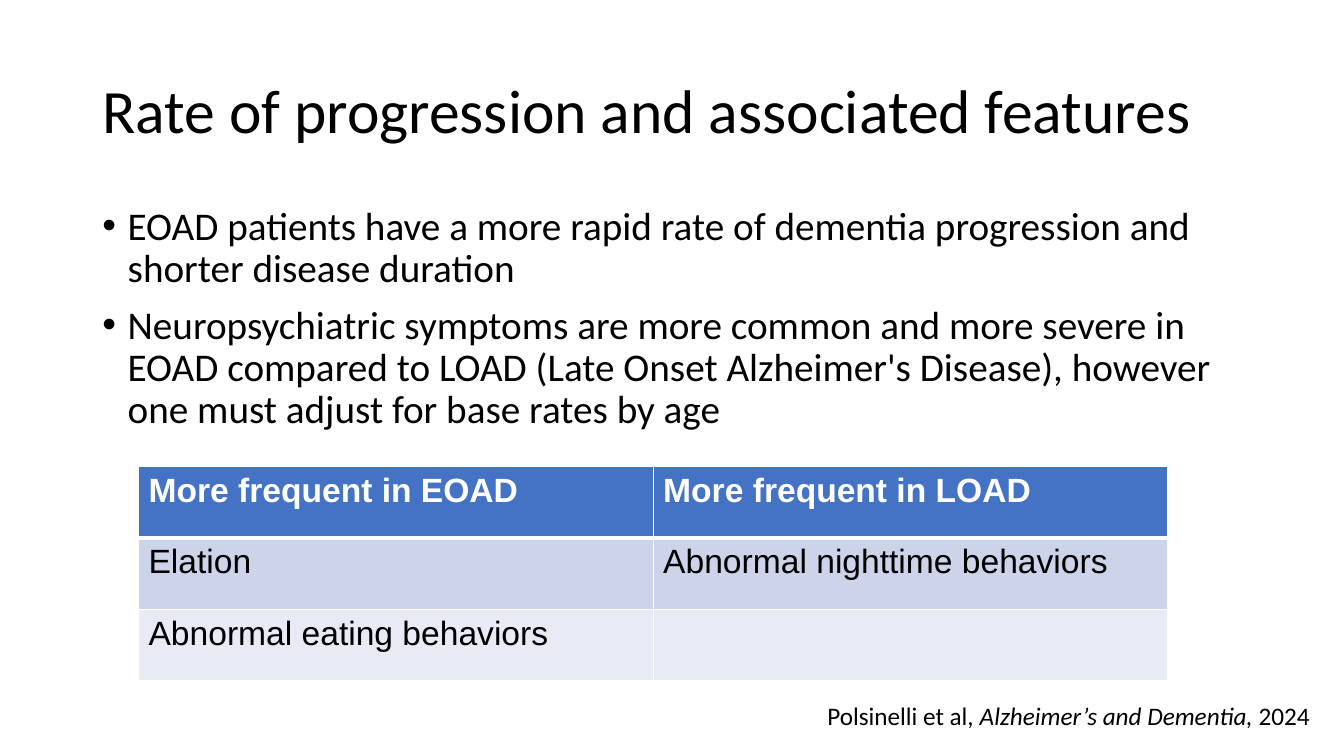
from dataclasses import dataclass

from lxml import etree
from pptx import Presentation
from pptx.dml.color import RGBColor
from pptx.enum.text import MSO_ANCHOR
from pptx.oxml.ns import qn
from pptx.util import Cm, Pt

TOP = MSO_ANCHOR.TOP
MIDDLE = MSO_ANCHOR.MIDDLE

BLACK = RGBColor(0x00, 0x00, 0x00)
WHITE = RGBColor(0xFF, 0xFF, 0xFF)
HEADER_BLUE = RGBColor(0x44, 0x72, 0xC4)
BAND_DARK = RGBColor(0xCD, 0xD4, 0xEA)
BAND_LIGHT = RGBColor(0xE8, 0xEB, 0xF5)

TEXT_FONT = "Calibri"
TABLE_FONT = "Arial"
INDENT = Cm(0.64)
COLUMN_WIDTH = Cm(12.97)
ROW_HEIGHT = Cm(1.8)


@dataclass(frozen=True)
class Span:
    text: str
    italic: bool = False


@dataclass(frozen=True)
class TextBlock:
    left: float
    top: float
    width: float
    height: float
    size: int
    paragraphs: tuple[tuple[Span, ...], ...]
    anchor: MSO_ANCHOR = TOP
    line_spacing: float = 0.9
    bulleted: bool = False
    wrap: bool = True


@dataclass(frozen=True)
class TableRow:
    texts: tuple[str, str]
    fill: RGBColor
    color: RGBColor = BLACK
    bold: bool = False
    top_line: int = 1
    bottom_line: int = 1


TEXT_BLOCKS = (
    TextBlock(2.33, 1.01, 29.21, 3.68, 44,
              ((Span("Rate of progression and associated features"),),),
              anchor=MIDDLE),
    TextBlock(2.33, 5.08, 29.21, 12.09, 28, (
        (Span("EOAD patients have a more rapid rate of dementia progression "
              "and shorter disease duration"),),
        (Span("Neuropsychiatric symptoms are more common and more severe in "
              "EOAD compared to LOAD (Late Onset Alzheimer's Disease), "
              "however one must adjust for base rates by age"),),
    ), bulleted=True),
    TextBlock(20.6, 17.53, 12.85, 1.02, 18, (
        (Span("Polsinelli et al, "),
         Span("Alzheimer’s and Dementia, ", italic=True),
         Span("2024")),
    ), line_spacing=1.0, wrap=False),
)

TABLE_ROWS = (
    TableRow(("More frequent in EOAD", "More frequent in LOAD"),
             HEADER_BLUE, WHITE, bold=True, bottom_line=3),
    TableRow(("Elation", "Abnormal nighttime behaviors"), BAND_DARK, top_line=3),
    TableRow(("Abnormal eating behaviors", ""), BAND_LIGHT),
)


def set_font(font, name: str, size: int, color: RGBColor, bold: bool = False) -> None:
    font.name = name
    font.size = Pt(size)
    font.color.rgb = color
    font.bold = bold


def add_bullet(paragraph) -> None:
    properties = paragraph._p.get_or_add_pPr()
    properties.set("marL", str(INDENT))
    properties.set("indent", str(-INDENT))
    etree.SubElement(properties, qn("a:buFont"), typeface="Arial")
    etree.SubElement(properties, qn("a:buChar"), char="•")


def draw_text(page, block: TextBlock) -> None:
    box = page.shapes.add_textbox(Cm(block.left), Cm(block.top),
                                  Cm(block.width), Cm(block.height))
    frame = box.text_frame
    frame.word_wrap = block.wrap
    frame.vertical_anchor = block.anchor
    for index, spans in enumerate(block.paragraphs):
        paragraph = frame.add_paragraph() if index else frame.paragraphs[0]
        if block.bulleted:
            add_bullet(paragraph)
        paragraph.line_spacing = block.line_spacing
        if index:
            paragraph.space_before = Pt(10)
        set_font(paragraph.font, TEXT_FONT, block.size, BLACK)
        for span in spans:
            run = paragraph.add_run()
            run.text = span.text
            if span.italic:
                run.font.italic = True


def set_borders(cell, row: TableRow) -> None:
    properties = cell._tc.get_or_add_tcPr()
    widths = {"lnL": 1, "lnR": 1, "lnT": row.top_line, "lnB": row.bottom_line}
    for position, (side, width) in enumerate(widths.items()):
        line = etree.Element(qn(f"a:{side}"), w=str(Pt(width)))
        fill = etree.SubElement(line, qn("a:solidFill"))
        etree.SubElement(fill, qn("a:srgbClr"), val=str(WHITE))
        properties.insert(position, line)


def draw_table(page, rows: tuple[TableRow, ...]) -> None:
    column_count = len(rows[0].texts)
    table = page.shapes.add_table(len(rows), column_count, Cm(3.49), Cm(11.76),
                                  COLUMN_WIDTH * column_count,
                                  ROW_HEIGHT * len(rows)).table
    for column in table.columns:
        column.width = COLUMN_WIDTH
    for row_index, row in enumerate(rows):
        table.rows[row_index].height = ROW_HEIGHT
        for column_index, text in enumerate(row.texts):
            cell = table.cell(row_index, column_index)
            cell.fill.solid()
            cell.fill.fore_color.rgb = row.fill
            set_borders(cell, row)
            paragraph = cell.text_frame.paragraphs[0]
            if text:
                paragraph.text = text
            set_font(paragraph.font, TABLE_FONT, 24, row.color, row.bold)


def main() -> None:
    deck = Presentation()
    deck.slide_width = Cm(33.87)
    deck.slide_height = Cm(19.05)
    page = deck.slides.add_slide(deck.slide_layouts[6])
    for block in TEXT_BLOCKS:
        draw_text(page, block)
    draw_table(page, TABLE_ROWS)
    deck.save("out.pptx")


if __name__ == "__main__":
    main()
